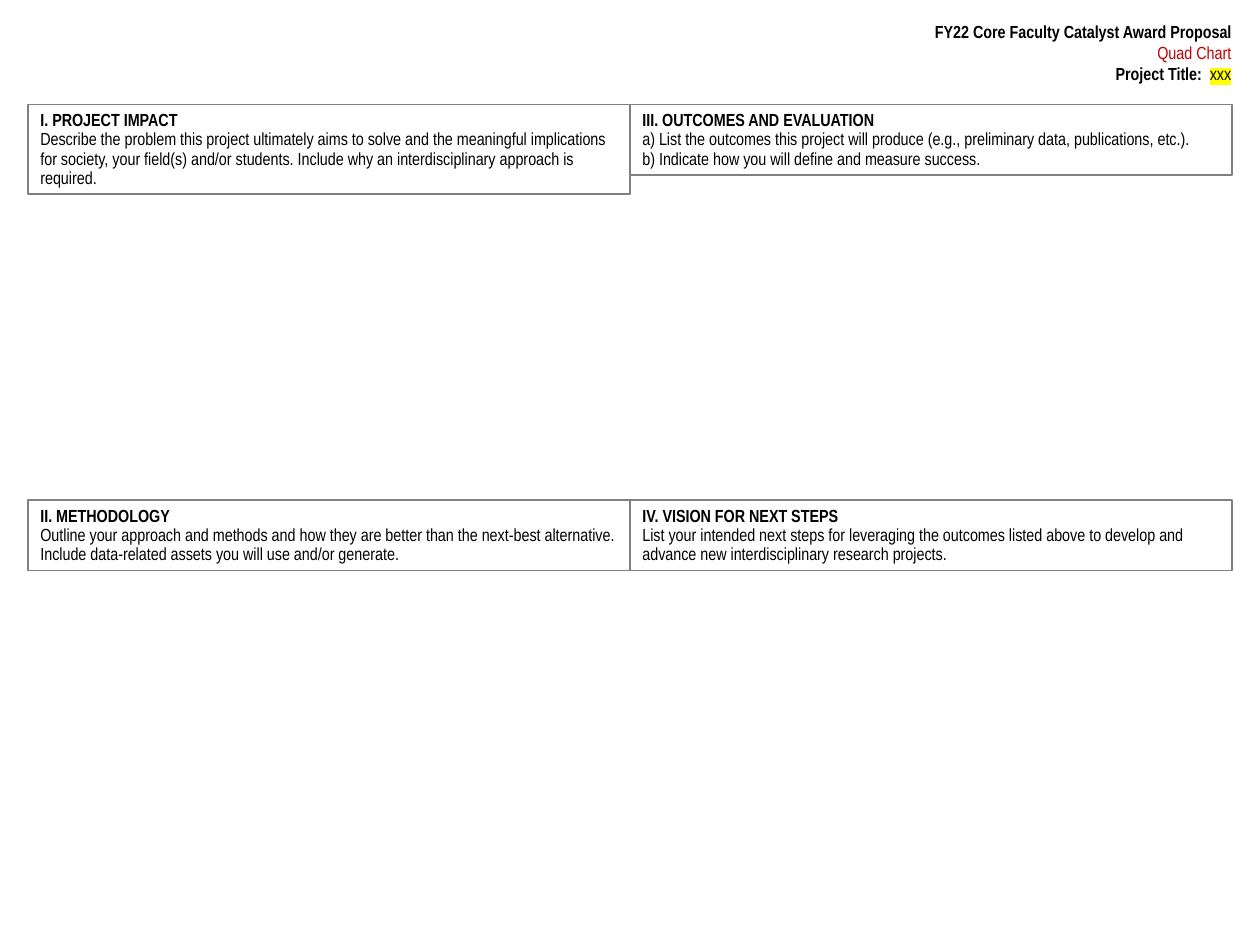
from lxml import etree
from pptx import Presentation
from pptx.dml.color import RGBColor
from pptx.enum.shapes import MSO_SHAPE as Shape
from pptx.enum.text import MSO_ANCHOR as Anchor, MSO_AUTO_SIZE as AutoSize, PP_ALIGN as Align
from pptx.oxml.ns import qn
from pptx.util import Pt

MARGIN = 16
QUAD_WIDTH = 344
ROW_TOPS = (59.8, 285.8)
LINE_HEIGHT = 11
PADDING = 3.6

QUADRANTS = [
    (0, 0, "I. PROJECT IMPACT", [
        "Describe the problem this project ultimately aims to solve and the meaningful implications "
        "for society, your field(s) and/or students. Include why an interdisciplinary approach is required."], 4),
    (1, 0, "III. OUTCOMES AND EVALUATION", [
        "a) List the outcomes this project will produce (e.g., preliminary data, publications, etc.).",
        "b) Indicate how you will define and measure success."], 3),
    (0, 1, "II. METHODOLOGY", [
        "Outline your approach and methods and how they are better than the next-best alternative. "
        "Include data-related assets you will use and/or generate."], 3),
    (1, 1, "IV. VISION FOR NEXT STEPS", [
        "List your intended next steps for leveraging the outcomes listed above to develop and "
        "advance new interdisciplinary research projects."], 3),
]


def color(value):
    """Turn a hex string into a colour."""
    return RGBColor.from_string(value)


def style(span, bold=False, ink="000000"):
    """Set the font of a run."""
    span.font.name = "Arial Narrow"
    span.font.size = Pt(10)
    span.font.bold = bold
    span.font.color.rgb = color(ink)


def highlight(span, tint):
    """Mark a styled run with a background colour."""
    mark = etree.Element(qn("a:highlight"))
    etree.SubElement(mark, qn("a:srgbClr"), val=tint)
    span.font._element.find(qn("a:latin")).addprevious(mark)


def add_header(page, left, top, width, height):
    """Place the right-aligned proposal heading."""
    box = page.shapes.add_textbox(Pt(left), Pt(top), Pt(width), Pt(height))
    frame = box.text_frame
    frame.word_wrap = True
    frame.auto_size = AutoSize.SHAPE_TO_FIT_TEXT
    frame.margin_top = frame.margin_right = frame.margin_bottom = 0
    frame.text = "FY22 Core Faculty Catalyst Award Proposal\nQuad Chart\nProject Title:  "
    for para, bold, ink in zip(frame.paragraphs, (True, False, True), ("000000", "C00000", "000000")):
        para.alignment = Align.RIGHT
        style(para.runs[0], bold, ink)
    project = frame.paragraphs[-1].add_run()
    project.text = "xxx"
    style(project)
    highlight(project, "FFFF00")


def add_quadrant(page, left, top, width, height, title, prompts):
    """Place one bordered box with a bold title and its prompts."""
    box = page.shapes.add_shape(Shape.RECTANGLE, Pt(left), Pt(top), Pt(width), Pt(height))
    box.shadow.inherit = False
    box.fill.solid()
    box.fill.fore_color.rgb = color("FFFFFF")
    box.line.color.rgb = color("808080")
    box.line.width = Pt(1)
    frame = box.text_frame
    frame.word_wrap = True
    frame.auto_size = AutoSize.SHAPE_TO_FIT_TEXT
    frame.vertical_anchor = Anchor.TOP
    frame.text = "\n".join([title, *prompts])
    for index, para in enumerate(frame.paragraphs):
        para.alignment = Align.LEFT
        para.line_spacing = Pt(LINE_HEIGHT)
        style(para.runs[0], bold=index == 0)


def main():
    """Build the quad chart slide."""
    deck = Presentation()
    deck.slide_width, deck.slide_height = Pt(720), Pt(540)
    page = deck.slides.add_slide(deck.slide_layouts[6])
    add_header(page, 227.6, 12.2, 476, 36)
    for column, row, title, prompts, lines in QUADRANTS:
        add_quadrant(page, MARGIN + column * QUAD_WIDTH, ROW_TOPS[row], QUAD_WIDTH,
                     lines * LINE_HEIGHT + 2 * PADDING, title, prompts)
    deck.save("out.pptx")


if __name__ == "__main__":
    main()
